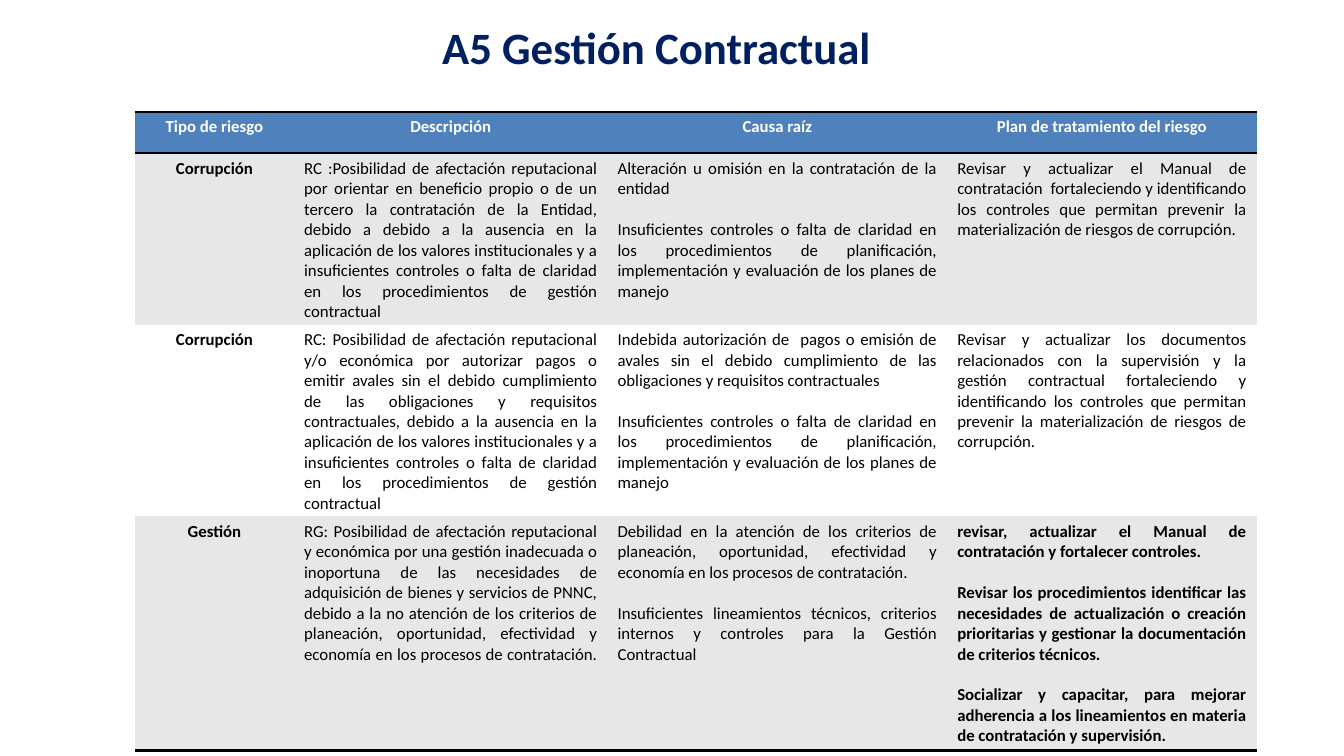
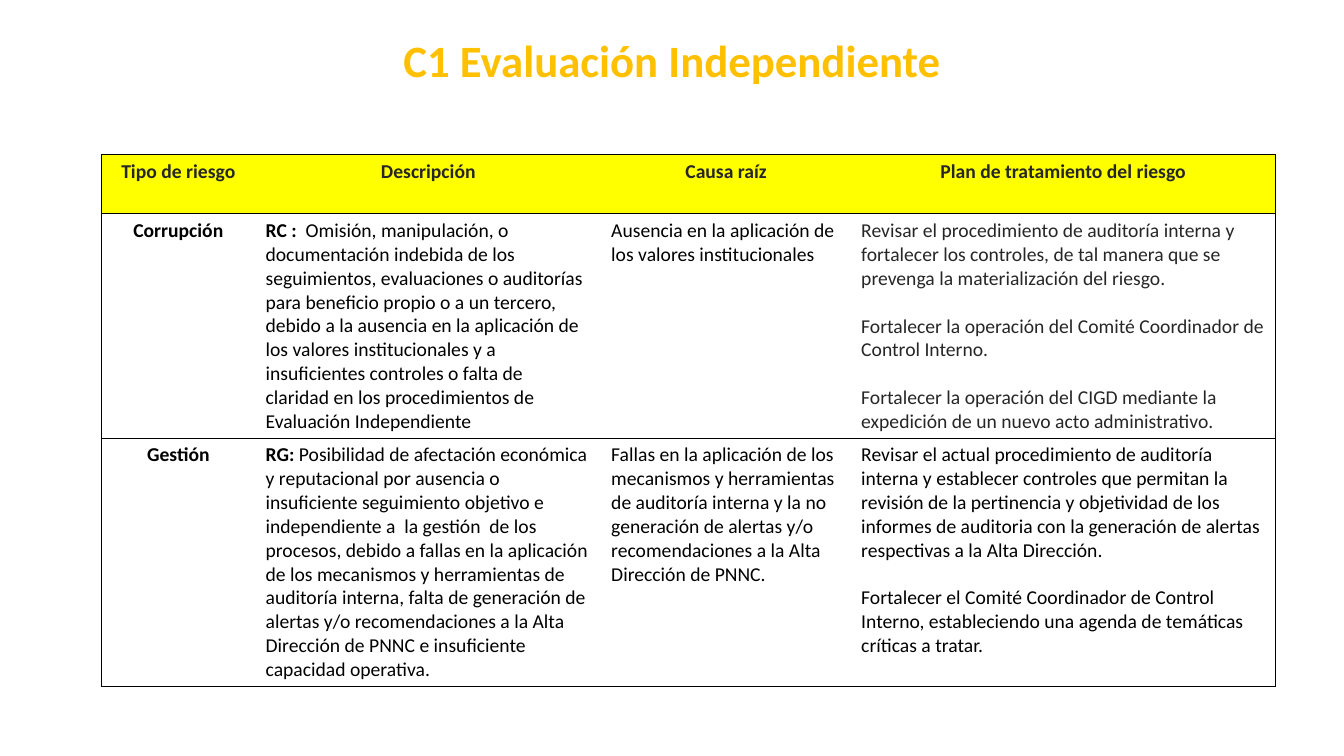
"""Build two slides with risk tables for contracting and independent evaluation."""
from dataclasses import dataclass

from lxml import etree
from pptx import Presentation
from pptx.dml.color import RGBColor
from pptx.enum.text import MSO_ANCHOR, PP_ALIGN
from pptx.oxml.ns import qn
from pptx.util import Cm, Pt

LEFT, CENTER, JUSTIFY = PP_ALIGN.LEFT, PP_ALIGN.CENTER, PP_ALIGN.JUSTIFY
TOP = MSO_ANCHOR.TOP

BLACK = RGBColor(0x00, 0x00, 0x00)
WHITE = RGBColor(0xFF, 0xFF, 0xFF)
NAVY = RGBColor(0x00, 0x20, 0x60)
BLUE = RGBColor(0x4F, 0x81, 0xBD)
GRAY = RGBColor(0xE7, 0xE7, 0xE7)
AMBER = RGBColor(0xFF, 0xC0, 0x00)
YELLOW = RGBColor(0xFF, 0xFF, 0x00)
CHARCOAL = RGBColor(0x26, 0x26, 0x26)

FONT = "Calibri"
TITLE_SIZE = 32
LINE_HEIGHT = 1.22
HEADINGS = ("Tipo de riesgo", "Descripción", "Causa raíz", "Plan de tratamiento del riesgo")
WEAK_CONTROLS = (
    "Insuficientes controles o falta de claridad en los procedimientos de planificación, "
    "implementación y evaluación de los planes de manejo"
)


@dataclass
class Entry:
    """Text of one table cell, with an optional bold lead."""
    paragraphs: tuple
    lead: str = ""
    bold: bool = False
    color: RGBColor = BLACK


@dataclass
class TableStyle:
    """Look of one risk table; rules are the row edges that carry a line."""
    size: int
    align: PP_ALIGN
    header_fill: RGBColor
    header_color: RGBColor
    band_fills: tuple
    rules: tuple
    rule_width: float
    sides: bool


CONTRACT_STYLE = TableStyle(12, JUSTIFY, BLUE, WHITE, (GRAY, WHITE), (0, 1, 4), 2, False)
EVALUATION_STYLE = TableStyle(14, LEFT, YELLOW, CHARCOAL, (None,), (0, 1, 2, 3), 0.75, True)

CONTRACT_RISKS = (
    (
        "Corrupción",
        Entry((
            "RC :Posibilidad de afectación reputacional por orientar en beneficio propio o de un "
            "tercero la contratación de la Entidad, debido a debido a la ausencia en la aplicación "
            "de los valores institucionales y a insuficientes controles o falta de claridad en los "
            "procedimientos de gestión contractual",
        )),
        Entry(("Alteración u omisión en la contratación de la entidad", WEAK_CONTROLS)),
        Entry((
            "Revisar y actualizar el Manual de contratación  fortaleciendo y identificando los "
            "controles que permitan prevenir la materialización de riesgos de corrupción.",
        )),
    ),
    (
        "Corrupción",
        Entry((
            "RC: Posibilidad de afectación reputacional y/o económica por autorizar pagos o emitir "
            "avales sin el debido cumplimiento de las obligaciones y requisitos contractuales, "
            "debido a la ausencia en la aplicación de los valores institucionales y a insuficientes "
            "controles o falta de claridad en los procedimientos de gestión contractual",
        )),
        Entry((
            "Indebida autorización de  pagos o emisión de avales sin el debido cumplimiento de las "
            "obligaciones y requisitos contractuales",
            WEAK_CONTROLS,
        )),
        Entry((
            "Revisar y actualizar los documentos relacionados con la supervisión y la gestión "
            "contractual fortaleciendo y identificando los controles que permitan prevenir la "
            "materialización de riesgos de corrupción.",
        )),
    ),
    (
        "Gestión",
        Entry((
            "RG: Posibilidad de afectación reputacional y económica por una gestión inadecuada o "
            "inoportuna de las necesidades de adquisición de bienes y servicios de PNNC, debido a "
            "la no atención de los criterios de planeación, oportunidad, efectividad y economía en "
            "los procesos de contratación. ",
        )),
        Entry((
            "Debilidad en la atención de los criterios de planeación, oportunidad, efectividad y "
            "economía en los procesos de contratación.",
            "Insuficientes lineamientos técnicos, criterios internos y controles para la Gestión "
            "Contractual",
        )),
        Entry((
            "revisar, actualizar el Manual de contratación y fortalecer controles.",
            "Revisar los procedimientos identificar las necesidades de actualización o creación "
            "prioritarias y gestionar la documentación de criterios técnicos.",
            "Socializar y capacitar, para mejorar adherencia a los lineamientos en materia de "
            "contratación y supervisión.",
        ), bold=True),
    ),
)

EVALUATION_RISKS = (
    (
        "Corrupción",
        Entry((
            "Omisión, manipulación, o documentación indebida de los seguimientos, evaluaciones o "
            "auditorías para beneficio propio o a un tercero, debido a la ausencia en la aplicación "
            "de los valores institucionales y a insuficientes controles o falta de claridad en los "
            "procedimientos de Evaluación Independiente",
        ), lead="RC :  "),
        Entry(("Ausencia en la aplicación de los valores institucionales",)),
        Entry((
            "Revisar el procedimiento de auditoría interna y fortalecer los controles, de tal "
            "manera que se prevenga la materialización del riesgo.",
            "Fortalecer la operación del Comité Coordinador de Control Interno.",
            "Fortalecer la operación del CIGD mediante la expedición de un nuevo acto "
            "administrativo.",
        ), color=CHARCOAL),
    ),
    (
        "Gestión",
        Entry((
            "Posibilidad de afectación económica y reputacional por ausencia o insuficiente "
            "seguimiento objetivo e independiente a  la gestión  de los procesos, debido a fallas "
            "en la aplicación de los mecanismos y herramientas de auditoría interna, falta de "
            "generación de alertas y/o recomendaciones a la Alta Dirección de PNNC e insuficiente "
            "capacidad operativa.",
        ), lead="RG: "),
        Entry((
            "Fallas en la aplicación de los mecanismos y herramientas de auditoría interna y la no "
            "generación de alertas y/o recomendaciones a la Alta Dirección de PNNC.",
        )),
        Entry((
            "Revisar el actual procedimiento de auditoría interna y establecer controles que "
            "permitan la revisión de la pertinencia y objetividad de los informes de auditoria con "
            "la generación de alertas respectivas a la Alta Dirección.",
            "Fortalecer el Comité Coordinador de Control Interno, estableciendo una agenda de "
            "temáticas críticas a tratar.",
        )),
    ),
)


def add_run(paragraph, text, size, color, bold):
    """Append one formatted run to a paragraph."""
    run = paragraph.add_run()
    run.text = text
    font_format = {"name": FONT, "size": Pt(size), "bold": bold}
    for attribute, value in font_format.items():
        setattr(run.font, attribute, value)
    run.font.color.rgb = color


def add_title(slide, text, color, left, top, width):
    """Add the centred slide title."""
    frame = slide.shapes.add_textbox(Cm(left), Cm(top), Cm(width), Cm(1.37)).text_frame
    frame_format = {"word_wrap": True, "vertical_anchor": TOP, "margin_left": 0,
                    "margin_right": 0, "margin_top": 0, "margin_bottom": 0}
    for attribute, value in frame_format.items():
        setattr(frame, attribute, value)
    paragraph = frame.paragraphs[0]
    paragraph.alignment = CENTER
    add_run(paragraph, text, TITLE_SIZE, color, True)


def set_borders(cell, edges, width):
    """Draw the chosen edges of a cell and clear the others."""
    properties = cell._tc.get_or_add_tcPr()
    for side, visible in edges.items():
        line = etree.SubElement(properties, qn(f"a:ln{side}"), w=str(Pt(width)))
        if visible:
            fill = etree.SubElement(line, qn("a:solidFill"))
            etree.SubElement(fill, qn("a:srgbClr"), val=str(BLACK))
        else:
            etree.SubElement(line, qn("a:noFill"))


def fill_cell(cell, entry, size, align, fill):
    """Write an entry into a cell and set the background."""
    if fill is None:
        cell.fill.background()
    else:
        cell.fill.solid()
        cell.fill.fore_color.rgb = fill
    frame = cell.text_frame
    for index, text in enumerate(entry.paragraphs):
        paragraph = frame.add_paragraph() if index else frame.paragraphs[0]
        paragraph.alignment = align
        if index:
            paragraph.space_before = Pt(size * LINE_HEIGHT)
        elif entry.lead:
            add_run(paragraph, entry.lead, size, entry.color, True)
        add_run(paragraph, text, size, entry.color, entry.bold)


def add_risk_table(slide, risks, style, left, top, widths, heights):
    """Add a table with a header row and one row per risk."""
    header = tuple(Entry((text,), bold=True, color=style.header_color) for text in HEADINGS)
    rows = [header] + [(Entry((kind,), bold=True), *entries) for kind, *entries in risks]
    table = slide.shapes.add_table(len(rows), len(widths), Cm(left), Cm(top),
                                   Cm(sum(widths)), Cm(sum(heights))).table
    table.first_row = table.horz_banding = False
    for column, width in zip(table.columns, widths):
        column.width = Cm(width)
    for row, height in zip(table.rows, heights):
        row.height = Cm(height)
    last_column = len(widths) - 1
    for row_index, entries in enumerate(rows):
        band = style.band_fills[(row_index - 1) % len(style.band_fills)]
        fill = band if row_index else style.header_fill
        for column_index, entry in enumerate(entries):
            cell = table.cell(row_index, column_index)
            edges = {
                "L": style.sides and column_index == 0,
                "R": style.sides and column_index == last_column,
                "T": row_index in style.rules,
                "B": row_index + 1 in style.rules,
            }
            set_borders(cell, edges, style.rule_width)
            align = style.align if row_index and column_index else CENTER
            fill_cell(cell, entry, style.size, align, fill)


def main():
    """Create the presentation and save it."""
    presentation = Presentation()
    presentation.slide_width, presentation.slide_height = Cm(33.87), Cm(19.05)
    blank = presentation.slide_layouts[6]

    contract = presentation.slides.add_slide(blank)
    add_title(contract, "A5 Gestión Contractual", NAVY, 4.55, 0.5, 24)
    add_risk_table(contract, CONTRACT_RISKS, CONTRACT_STYLE, 3.4, 2.82,
                   (4.01, 7.9, 8.56, 7.8), (1.04, 4.3, 4.8, 5.9))

    evaluation = presentation.slides.add_slide(blank)
    add_title(evaluation, "C1 Evaluación Independiente", AMBER, 7.19, 0.82, 19.5)
    add_risk_table(evaluation, EVALUATION_RISKS, EVALUATION_STYLE, 2.55, 3.89,
                   (3.89, 8.71, 6.3, 10.69), (1.5, 5.65, 6.25))

    presentation.save("out.pptx")


if __name__ == "__main__":
    main()
